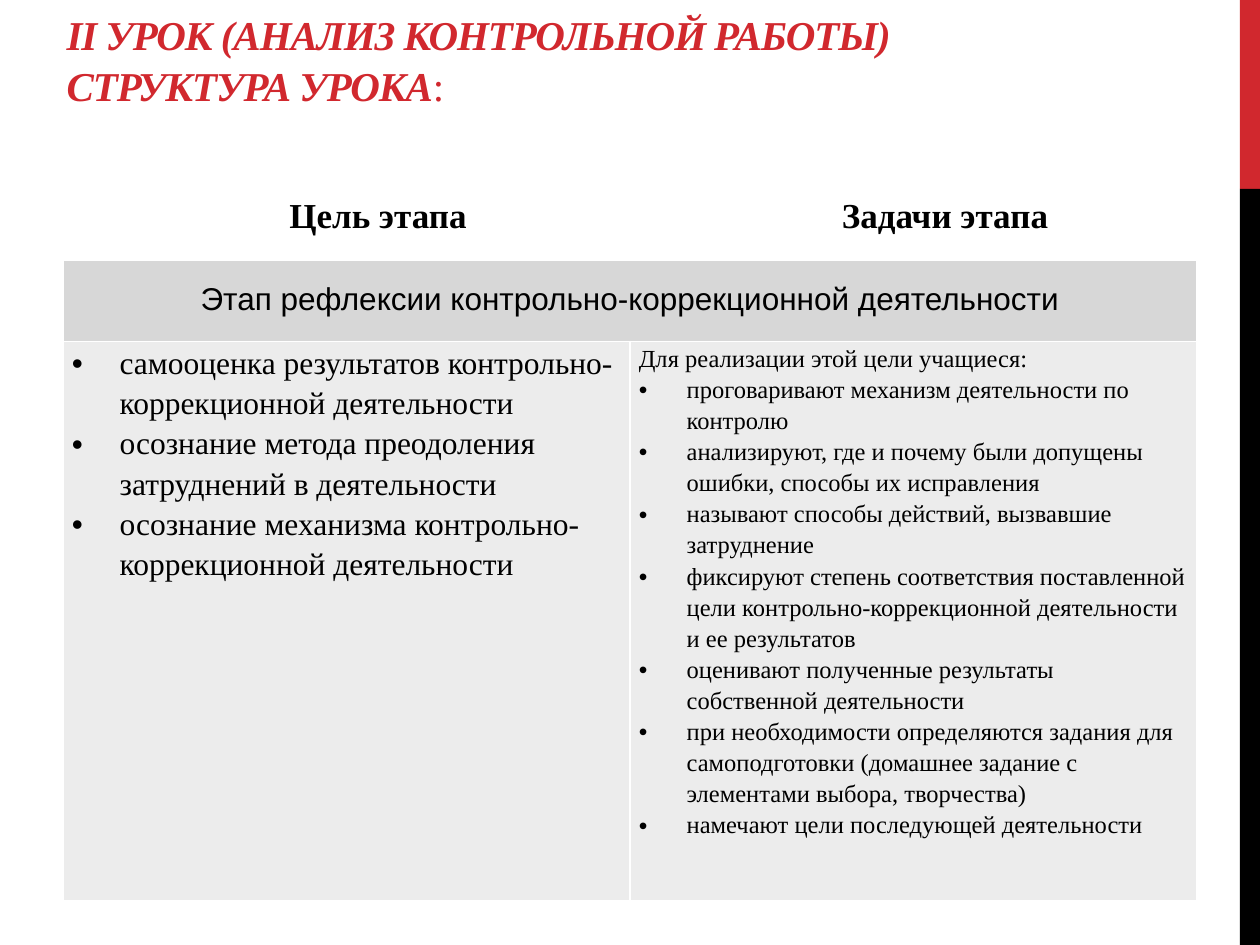
import pptx
import pptx.util
import pptx.dml.color
import pptx.enum.shapes
import pptx.enum.text
import pptx.oxml.ns
from lxml import etree

Inches, Pt = pptx.util.Inches, pptx.util.Pt
ALIGN, ANCHOR = pptx.enum.text.PP_ALIGN, pptx.enum.text.MSO_ANCHOR
SERIF, SANS = "Times New Roman", "Arial"
RED, BLACK, WHITE = "D1282E", "000000", "FFFFFF"
BAND, BODY = "D7D7D7", "ECECEC"

TITLE = "II УРОК (АНАЛИЗ КОНТРОЛЬНОЙ РАБОТЫ)\vСТРУКТУРА УРОКА"
BARS = [(0, 1.5, RED), (1.5, 6, BLACK)]
HEADERS = ["Цель этапа", "Задачи этапа"]
STAGE = "Этап рефлексии контрольно-коррекционной деятельности"
GOALS = [
    "самооценка результатов контрольно-коррекционной деятельности",
    "осознание метода преодоления затруднений в деятельности",
    "осознание механизма контрольно-коррекционной деятельности",
]
INTRO = "Для реализации этой цели учащиеся:"
TASKS = [
    "проговаривают механизм деятельности по контролю",
    "анализируют, где и почему были допущены ошибки, способы их исправления",
    "называют способы действий, вызвавшие затруднение",
    "фиксируют степень соответствия поставленной цели контрольно-коррекционной деятельности и ее результатов",
    "оценивают полученные результаты собственной деятельности",
    "при необходимости определяются задания для самоподготовки (домашнее задание с элементами выбора, творчества)",
    "намечают цели последующей деятельности",
]
ROW_HEIGHTS = [0.66, 0.66, 4.44]


def rgb(value):
    return pptx.dml.color.RGBColor.from_string(value)


def style(r, size, color=BLACK, font=SERIF, bold=False, italic=False):
    f = r.font
    f.size, f.name, f.bold, f.italic = Pt(size), font, bold, italic
    f.color.rgb = rgb(color)


def add_xml(parent, tag, **attrs):
    return etree.SubElement(parent, pptx.oxml.ns.qn(tag), attrs)


def indent(p, left, first=0):
    pPr = p._p.get_or_add_pPr()
    pPr.set("marL", str(Inches(left)))
    pPr.set("indent", str(Inches(first)))
    return pPr


def style_cell(cell, fill, bottom=1, inset=0.07, margin=0):
    cell.margin_left = cell.margin_right = Inches(inset)
    cell.margin_top = cell.margin_bottom = Inches(margin)
    tcPr = cell._tc.get_or_add_tcPr()
    for side, width in zip("LRTB", (1, 1, 1, bottom)):
        ln = add_xml(tcPr, f"a:ln{side}", w=str(Pt(width)))
        add_xml(add_xml(ln, "a:solidFill"), "a:srgbClr", val=WHITE)
    cell.fill.solid()
    cell.fill.fore_color.rgb = rgb(fill)


def fill_list(cell, items, size, intro=None):
    lines = ([intro] if intro else []) + items
    tf = cell.text_frame
    tf.text = "\n".join(lines)
    for p, line in zip(tf.paragraphs, lines):
        p.line_spacing = 1.15
        if line != intro:
            pPr = indent(p, 0.38, -0.38)
            add_xml(pPr, "a:buFont", typeface=SANS)
            add_xml(pPr, "a:buChar", char="•")
        style(p.runs[0], size)


def fill_centered(cell, text, size, font, bold):
    cell.vertical_anchor = ANCHOR.MIDDLE
    p = cell.text_frame.paragraphs[0]
    p.text = text
    p.alignment = ALIGN.CENTER
    style(p.runs[0], size, font=font, bold=bold)
    return p


prs = pptx.Presentation()
prs.slide_width, prs.slide_height = Inches(10), Inches(7.5)
s = prs.slides.add_slide(prs.slide_layouts[6])

for top, height, color in BARS:
    sp = s.shapes.add_shape(pptx.enum.shapes.MSO_SHAPE.RECTANGLE,
                            Inches(9.84), Inches(top), Inches(0.16), Inches(height))
    sp.shadow.inherit = False
    sp.fill.solid()
    sp.fill.fore_color.rgb = rgb(color)
    sp.line.fill.background()

sp = s.shapes.add_textbox(Inches(0.43), Inches(0.13), Inches(9), Inches(0.79))
tf = sp.text_frame
tf.word_wrap = True
tf.vertical_anchor = ANCHOR.BOTTOM
tf.margin_top, tf.margin_bottom = 0, Inches(0.05)
p = tf.paragraphs[0]
p.text = TITLE
p.line_spacing = 1.04
colon = p.add_run()
colon.text = ":"
for r in p.runs:
    strong = r.text != ":"
    style(r, 23.4, RED, bold=strong, italic=strong)
    r._r.get_or_add_rPr().set("spc", "-60")

table = s.shapes.add_table(3, 2, Inches(0.5), Inches(1.39),
                           Inches(9), Inches(sum(ROW_HEIGHTS))).table
for row, height in zip(table.rows, ROW_HEIGHTS):
    row.height = Inches(height)
for col in table.columns:
    col.width = Inches(4.5)

for i, text in enumerate(HEADERS):
    cell = table.cell(0, i)
    style_cell(cell, WHITE, bottom=3)
    indent(fill_centered(cell, text, 20, SERIF, True), 0.5)

table.cell(1, 0).merge(table.cell(1, 1))
style_cell(table.cell(1, 0), BAND, inset=0.1, margin=0.05)
fill_centered(table.cell(1, 0), STAGE, 18, SANS, False)

for i, (items, size, intro) in enumerate([(GOALS, 18, None), (TASKS, 14, INTRO)]):
    cell = table.cell(2, i)
    style_cell(cell, BODY)
    fill_list(cell, items, size, intro)

prs.save("out.pptx")
